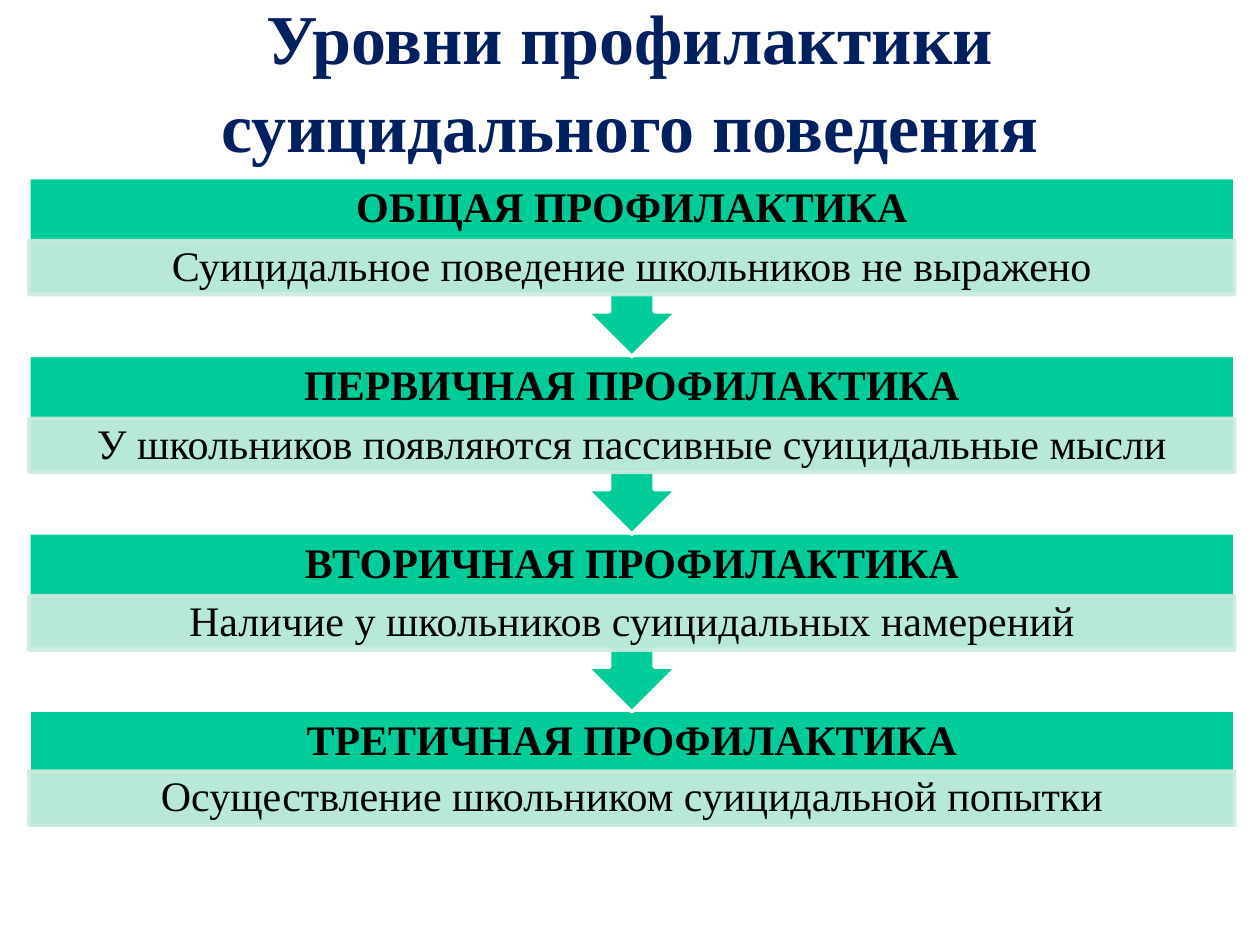
from lxml.etree import SubElement
from pptx import Presentation
from pptx.dml.color import RGBColor
from pptx.enum.shapes import MSO_SHAPE
from pptx.enum.text import MSO_ANCHOR, PP_ALIGN
from pptx.oxml.ns import qn
from pptx.util import Inches, Pt

GREEN = RGBColor(0x00, 0xCC, 0x99)
PALE_GREEN = RGBColor(0xCC, 0xEC, 0xDE)
WHITE = RGBColor(0xFF, 0xFF, 0xFF)
BLACK = RGBColor(0x00, 0x00, 0x00)
NAVY = RGBColor(0x00, 0x20, 0x60)

LEFT, WIDTH = Inches(0.23), Inches(9.57)
FIRST_TOP, STEP = 1.41, 1.41
LEVELS = [
    ("ОБЩАЯ ПРОФИЛАКТИКА", "Суицидальное поведение школьников не выражено", 0.5),
    ("ПЕРВИЧНАЯ ПРОФИЛАКТИКА", "У школьников появляются пассивные суицидальные мысли", 0.5),
    ("ВТОРИЧНАЯ ПРОФИЛАКТИКА", "Наличие у школьников суицидальных намерений", 0.5),
    ("ТРЕТИЧНАЯ ПРОФИЛАКТИКА", "Осуществление школьником суицидальной попытки", 0.48),
]


def write_text(shape, text, size=24, bold=False, color=BLACK, spacing=0.9, side=0.19, edge=0.03):
    frame = shape.text_frame
    frame.word_wrap = True
    frame.vertical_anchor = MSO_ANCHOR.MIDDLE
    frame.margin_left = frame.margin_right = Inches(side)
    frame.margin_top = frame.margin_bottom = Inches(edge)
    para = frame.paragraphs[0]
    para.text = text
    para.alignment = PP_ALIGN.CENTER
    para.line_spacing = spacing
    para.font.name = "Times New Roman"
    para.font.size = Pt(size)
    para.font.bold = bold
    para.font.color.rgb = color


def add_block(kind, top, height, fill, line, opacity=100):
    shape = page.shapes.add_shape(kind, LEFT, Inches(top), WIDTH, Inches(height))
    shape.shadow.inherit = False
    shape.fill.solid()
    shape.fill.fore_color.rgb = fill
    shape.line.color.rgb = line
    shape.line.width = Pt(2)
    if opacity < 100:
        for color in shape._element.spPr.iter(qn("a:srgbClr")):
            SubElement(color, qn("a:alpha"), val=str(opacity * 1000))
    return shape


deck = Presentation()
deck.slide_width, deck.slide_height = Inches(10), Inches(7.5)
page = deck.slides.add_slide(deck.slide_layouts[6])

for index, (heading, detail, offset) in reversed(list(enumerate(LEVELS))):
    top = FIRST_TOP + index * STEP
    if index == len(LEVELS) - 1:
        add_block(MSO_SHAPE.RECTANGLE, top, 0.93, GREEN, WHITE)
    else:
        callout = add_block(MSO_SHAPE.UP_ARROW_CALLOUT, top, 1.42, GREEN, WHITE)
        callout.rotation = 180
    heading_box = page.shapes.add_textbox(LEFT, Inches(top), WIDTH, Inches(0.5))
    write_text(heading_box, heading, bold=True)
    detail_bar = add_block(MSO_SHAPE.RECTANGLE, top + offset, 0.43, PALE_GREEN, PALE_GREEN, opacity=90)
    write_text(detail_bar, detail)

title_box = page.shapes.add_textbox(0, 0, Inches(10), Inches(1.25))
write_text(title_box, "Уровни профилактики\vсуицидального поведения", size=40, bold=True,
           color=NAVY, spacing=1.05, side=0.1, edge=0.05)

deck.save("out.pptx")
